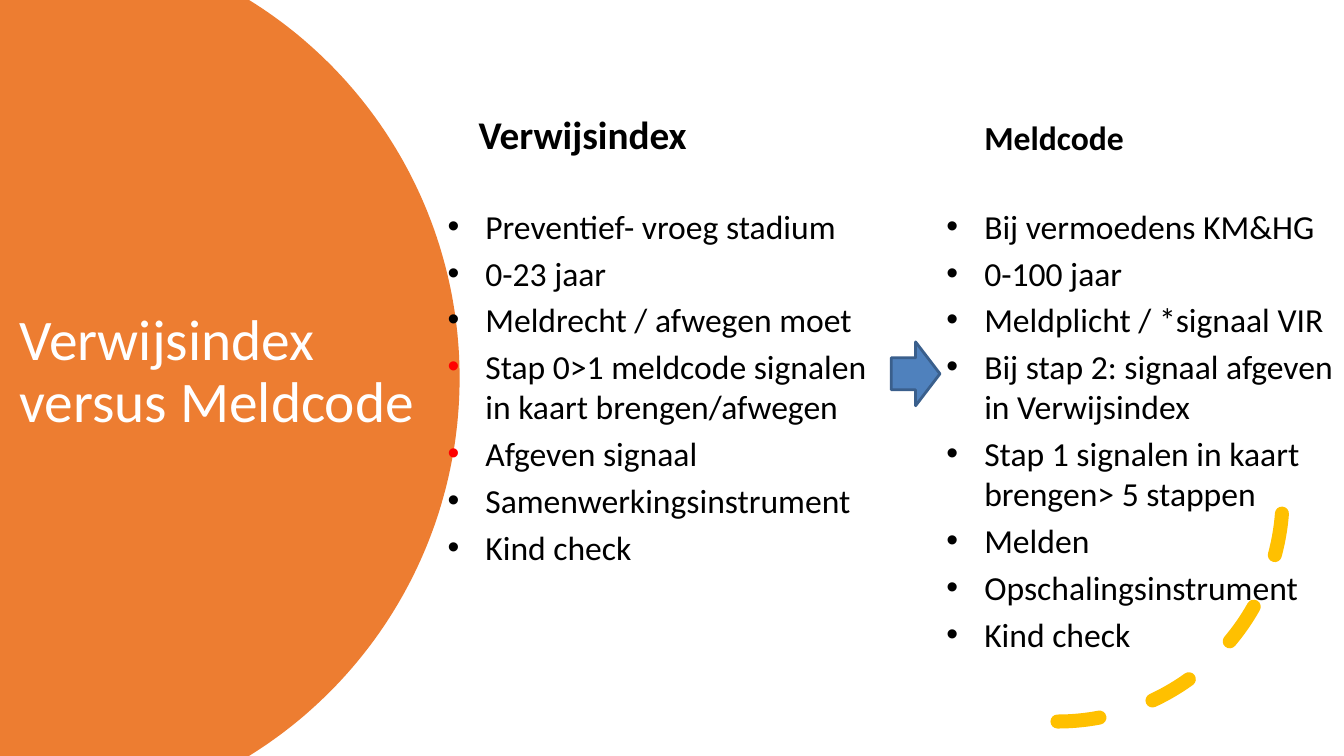
import math
from dataclasses import dataclass

from lxml import etree
from pptx import Presentation, util as u
from pptx.dml.color import RGBColor
from pptx.enum import dml, shapes, text
from pptx.oxml import ns

SLIDE_WIDTH, SLIDE_HEIGHT = u.Inches(13.33), u.Inches(7.5)
COLUMNS, ROWS = 160, 90
FONT = "Calibri"
BLACK, WHITE, RED = "000000", "FFFFFF", "FF0000"
ORANGE, YELLOW, BLUE, DARK_BLUE = "ED7D31", "FFC000", "4F81BD", "3A5F8C"


@dataclass(frozen=True)
class Area:
    column: float
    row: float
    columns: float
    rows: float


@dataclass(frozen=True)
class Topic:
    heading: str
    heading_size: int
    heading_area: Area
    points: tuple[str, ...]
    points_area: Area
    red_bullets: tuple[int, ...] = ()


TOPICS = (
    Topic(
        "Verwijsindex", 28, Area(55.8, 10.9, 28.1, 8.4),
        (
            "Preventief- vroeg stadium",
            "0-23 jaar",
            "Meldrecht / afwegen moet",
            "Stap 0>1 meldcode signalen in kaart brengen/afwegen",
            "Afgeven signaal",
            "Samenwerkingsinstrument",
            "Kind check",
        ),
        Area(52.1, 23.9, 54, 51.8), (3, 4),
    ),
    Topic(
        "Meldcode", 24, Area(116, 10.9, 19.7, 8.4),
        (
            "Bij vermoedens KM&HG",
            "0-100 jaar",
            "Meldplicht / *signaal VIR",
            "Bij stap 2: signaal afgeven in Verwijsindex",
            "Stap 1 signalen in kaart brengen> 5 stappen",
            "Melden",
            "Opschalingsinstrument",
            "Kind check",
        ),
        Area(111.5, 23.9, 48.4, 60.2),
    ),
)


def across(columns: float) -> int:
    return round(SLIDE_WIDTH * columns / COLUMNS)


def down(rows: float) -> int:
    return round(SLIDE_HEIGHT * rows / ROWS)


def box(area: Area) -> tuple[int, int, int, int]:
    return across(area.column), down(area.row), across(area.columns), down(area.rows)


def colour(value: str) -> RGBColor:
    return RGBColor.from_string(value)


def apply(target, values: dict) -> None:
    for key, value in values.items():
        setattr(target, key, value)


def fill(shape, value: str) -> None:
    shape.fill.solid()
    shape.fill.fore_color.rgb = colour(value)


def outline(shape, value: str, points: float) -> None:
    shape.line.color.rgb = colour(value)
    shape.line.width = u.Pt(points)


def write(paragraph, words: str, size: float, ink: str = BLACK, bold: bool = False) -> None:
    run = paragraph.add_run()
    run.text = words
    apply(run.font, {"name": FONT, "size": u.Pt(size), "bold": bold})
    run.font.color.rgb = colour(ink)
    paragraph.alignment = text.PP_ALIGN.LEFT


def add_bullet(paragraph, ink: str) -> None:
    properties = paragraph._p.get_or_add_pPr()
    indent = across(4.5)
    properties.set("marL", str(indent))
    properties.set("indent", str(-indent))
    bullet_colour = etree.SubElement(properties, ns.qn("a:buClr"))
    etree.SubElement(bullet_colour, ns.qn("a:srgbClr"), val=ink)
    etree.SubElement(properties, ns.qn("a:buFont"), typeface="Arial")
    etree.SubElement(properties, ns.qn("a:buChar"), char="•")


def add_frame(slide, area: Area, anchor):
    frame = slide.shapes.add_textbox(*box(area)).text_frame
    apply(frame, {"word_wrap": True, "vertical_anchor": anchor})
    return frame


def add_topic(slide, topic: Topic) -> None:
    heading = add_frame(slide, topic.heading_area, text.MSO_ANCHOR.BOTTOM)
    write(heading.paragraphs[0], topic.heading, topic.heading_size, bold=True)

    points = add_frame(slide, topic.points_area, text.MSO_ANCHOR.TOP)
    for index, point in enumerate(topic.points):
        paragraph = points.add_paragraph() if index else points.paragraphs[0]
        write(paragraph, point, 24)
        paragraph.space_before = u.Pt(4.6)
        add_bullet(paragraph, RED if index in topic.red_bullets else BLACK)


def add_disc(slide) -> None:
    centre, radius, middle = 1.8, 52.92, ROWS / 2
    reach = math.asin(middle / radius)
    steps = 120
    angles = [reach * (2 * step / steps - 1) for step in range(steps + 1)]
    edge = [
        (across(centre + radius * math.cos(angle)), down(middle + radius * math.sin(angle)))
        for angle in angles
    ]
    builder = slide.shapes.build_freeform(0, 0)
    builder.add_line_segments([*edge, (0, SLIDE_HEIGHT)], close=True)
    disc = builder.convert_to_shape()
    disc.shadow.inherit = False
    fill(disc, ORANGE)
    disc.line.fill.background()
    slide.shapes._spTree.insert(2, disc._element)


def add_title(slide) -> None:
    title = slide.shapes.title
    places = box(Area(1.1, 15.1, 49.9, 58.6))
    apply(title, dict(zip(("left", "top", "width", "height"), places)))
    apply(title.text_frame, {
        "word_wrap": True,
        "auto_size": text.MSO_AUTO_SIZE.NONE,
        "vertical_anchor": text.MSO_ANCHOR.MIDDLE,
    })
    paragraph = title.text_frame.paragraphs[0]
    write(paragraph, "Verwijsindex versus Meldcode", 41, WHITE)
    paragraph.line_spacing = 0.9


def add_dashed_arc(slide) -> None:
    arc = slide.shapes.add_shape(shapes.MSO_SHAPE.ARC, *box(Area(99.1, 32.3, 53.6, 53.6)))
    arc.shadow.inherit = False
    arc.fill.background()
    outline(arc, YELLOW, 10)
    arc.line.dash_style = dml.MSO_LINE.DASH
    properties = arc._element.spPr
    properties.find(ns.qn("a:ln")).set("cap", "rnd")
    properties.find(ns.qn("a:xfrm")).set("flipV", "1")


def add_arrow(slide) -> None:
    arrow = slide.shapes.add_shape(
        shapes.MSO_SHAPE.RIGHT_ARROW, *box(Area(106.1, 40.7, 5.8, 7.6))
    )
    arrow.shadow.inherit = False
    fill(arrow, BLUE)
    outline(arrow, DARK_BLUE, 2)


def main() -> None:
    deck = Presentation()
    apply(deck, {"slide_width": SLIDE_WIDTH, "slide_height": SLIDE_HEIGHT})
    slide = deck.slides.add_slide(deck.slide_layouts.get_by_name("Title Only"))
    add_disc(slide)
    add_title(slide)
    add_dashed_arc(slide)
    for topic in TOPICS:
        add_topic(slide, topic)
    add_arrow(slide)
    deck.save("out.pptx")


if __name__ == "__main__":
    main()
